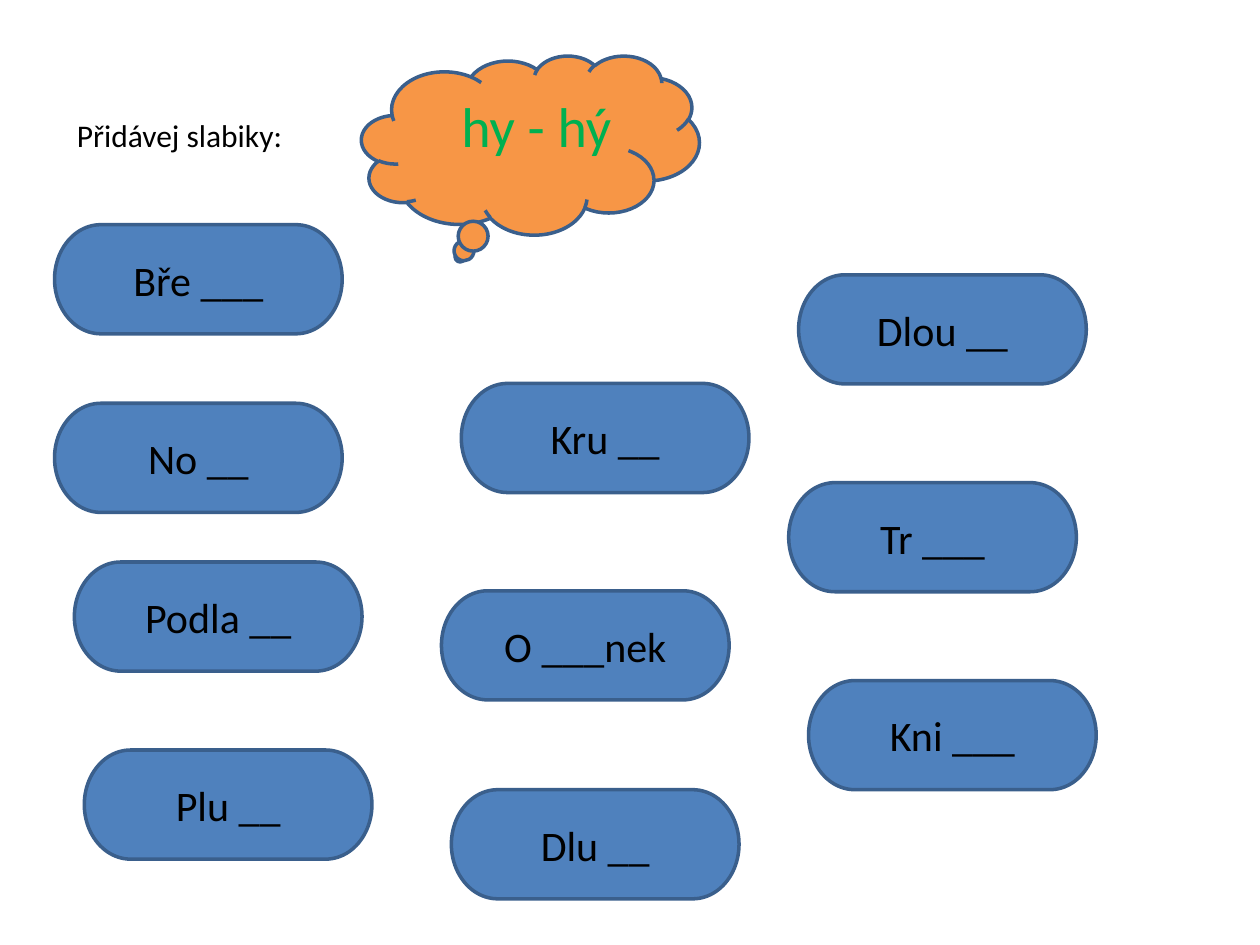
from lxml import etree
from pptx import Presentation
from pptx.dml.color import RGBColor
from pptx.enum import shapes, text
from pptx.oxml.ns import qn
from pptx.util import Cm, Pt

# Content: heading, syllables and words to complete, with left and top in cm
HEADING = "Přidávej slabiky:"
SYLLABLES = "hy - hý"
SYLLABLES_TAB = 7.75
WORDS = [
    ("Bře ___", 1.1, 4.53),
    ("No __", 1.1, 8.13),
    ("Podla __", 1.5, 11.33),
    ("Plu __", 1.7, 15.12),
    ("Kru __", 9.3, 7.73),
    ("O ___nek", 8.9, 11.91),
    ("Dlu __", 9.1, 15.92),
    ("Dlou __", 16.1, 5.54),
    ("Tr ___", 15.9, 9.73),
    ("Kni ___", 16.3, 13.72),
]
WORD_SIZE = (5.8, 2.2)
BLUE, ORANGE, GREEN = "4F81BD", "F79646", "00B050"
OUTLINE, BLACK = "3A5F8C", "000000"


def color(value):
    return RGBColor.from_string(value)


def add_text(para, wording, size=18, ink=BLACK):
    span = para.add_run()
    span.text = wording
    span.font.name = "Calibri"
    span.font.size = Pt(size)
    span.font.color.rgb = color(ink)


def add_figure(page, kind, place, fill):
    figure = page.shapes.add_shape(kind, *map(Cm, place))
    figure.shadow.inherit = False
    figure.fill.solid()
    figure.fill.fore_color.rgb = color(fill)
    figure.line.color.rgb = color(OUTLINE)
    figure.line.width = Pt(2)
    return figure


def add_tab_stop(para, position):
    stops = etree.SubElement(para._p.get_or_add_pPr(), qn("a:tabLst"))
    etree.SubElement(stops, qn("a:tab"), pos=str(Cm(position)), algn="l")


def main():
    deck = Presentation()
    deck.slide_width, deck.slide_height = Cm(25.4), Cm(19.05)
    page = deck.slides.add_slide(deck.slide_layouts[6])

    # Cloud behind the syllables
    add_figure(page, shapes.MSO_SHAPE.CLOUD_CALLOUT, (7.29, 1.12, 6.81, 3.61), ORANGE)

    # Heading line
    box = page.shapes.add_textbox(*map(Cm, (1.3, 1.73, 11.43, 1.62)))
    box.text_frame.word_wrap = True
    para = box.text_frame.paragraphs[0]
    add_tab_stop(para, SYLLABLES_TAB)
    add_text(para, HEADING + "\t")
    add_text(para, SYLLABLES, size=32, ink=GREEN)

    # Words to complete
    for word, left, top in WORDS:
        pill = add_figure(page, shapes.MSO_SHAPE.FLOWCHART_TERMINATOR,
                          (left, top, *WORD_SIZE), BLUE)
        pill.text_frame.vertical_anchor = text.MSO_ANCHOR.MIDDLE
        para = pill.text_frame.paragraphs[0]
        para.alignment = text.PP_ALIGN.CENTER
        add_text(para, word, size=24)

    deck.save("out.pptx")


if __name__ == "__main__":
    main()
